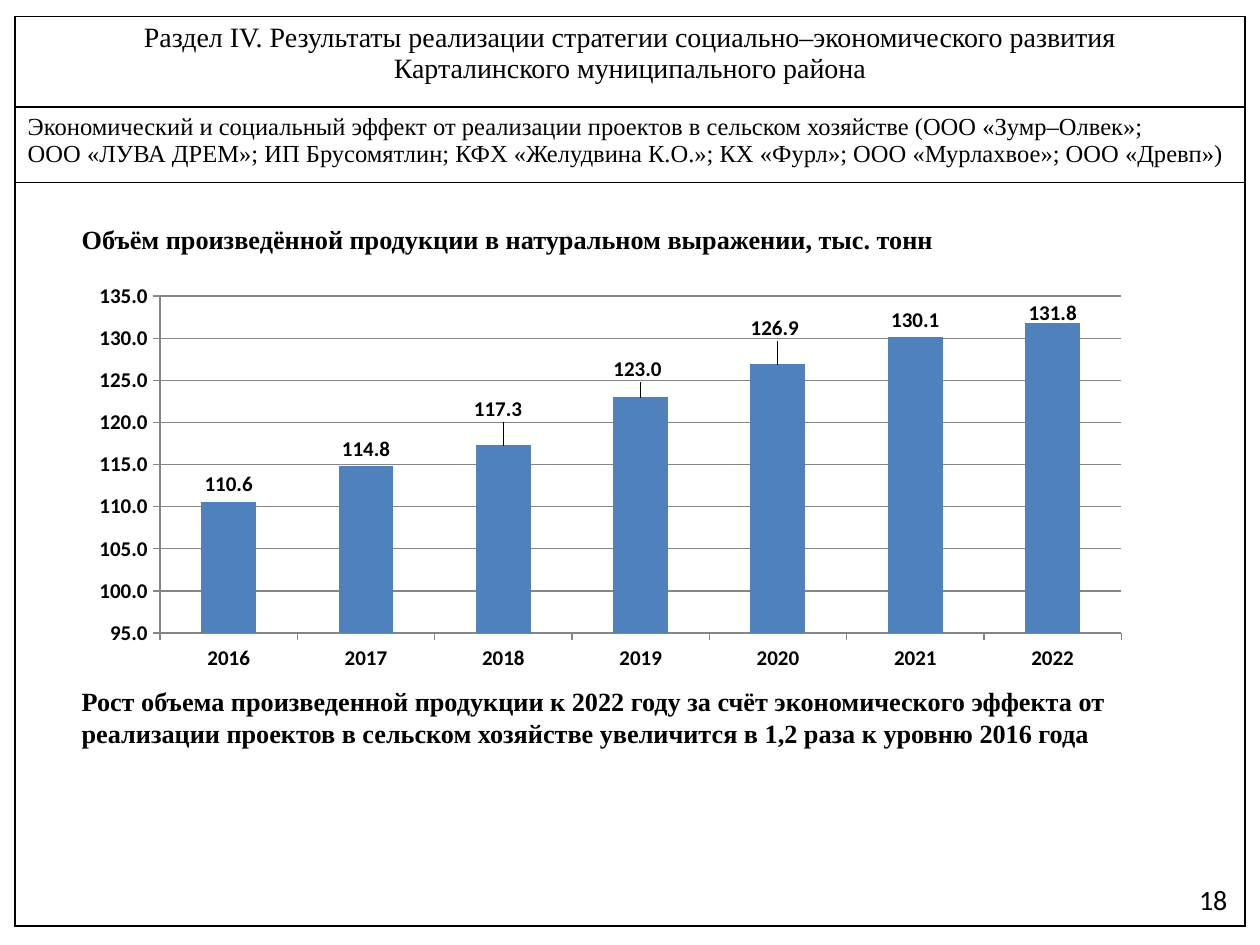
from lxml import etree
from pptx import Presentation
from pptx.chart.data import CategoryChartData
from pptx.dml.color import RGBColor
from pptx.enum.chart import XL_CHART_TYPE, XL_LABEL_POSITION as LABEL_POS, XL_TICK_MARK as TICK
from pptx.enum.text import MSO_ANCHOR as ANCHOR, PP_ALIGN as ALIGN
from pptx.oxml import parse_xml
from pptx.oxml.ns import nsdecls, qn
from pptx.util import Inches, Pt

COLORS = {"text": "000000", "border": "000000", "bar": "4F81BD", "axis": "868686"}
SERIF, SANS = "Times New Roman", "Calibri"

TITLE = ["Раздел IV. Результаты реализации стратегии социально–экономического развития",
         "Карталинского муниципального района"]
SUBTITLE = ["Экономический и социальный эффект от реализации проектов в сельском хозяйстве (ООО «Зумр–Олвек»;",
            "ООО «ЛУВА ДРЕМ»; ИП Брусомятлин; КФХ «Желудвина К.О.»; КХ «Фурл»; ООО «Мурлахвое»; ООО «Древп»)"]
CHART_TITLE = "Объём произведённой продукции в натуральном выражении, тыс. тонн"
CONCLUSION = ("Рост объема произведенной продукции к 2022 году за счёт экономического эффекта от "
              "реализации проектов в сельском хозяйстве увеличится в 1,2 раза к уровню 2016 года")
OUTPUT = {"2016": 110.6, "2017": 114.8, "2018": 117.3, "2019": 123.0,
          "2020": 126.9, "2021": 130.1, "2022": 131.8}
# Label shifts as fractions of the chart size, by point index
LABEL_SHIFTS = {2: (-0.005, -0.045), 3: (-0.003, -0.025), 4: (-0.003, -0.045), 6: (0, 0.02)}


def rgb(name):
    return RGBColor.from_string(COLORS[name])


def style_font(font, size, name, bold=False):
    font.size, font.name, font.bold = Pt(size), name, bold
    font.color.rgb = rgb("text")


def write(tf, lines, size, name=SERIF, bold=False, align=ALIGN.LEFT):
    tf.text = "\n".join(lines)
    for p in tf.paragraphs:
        p.alignment = align
        for r in p.runs:
            style_font(r.font, size, name, bold)


def add_text(slide, box, text, size, anchor=ANCHOR.TOP, **style):
    tf = slide.shapes.add_textbox(*map(Inches, box)).text_frame
    tf.word_wrap = True
    tf.vertical_anchor = anchor
    write(tf, [text], size, **style)


def set_borders(cell):
    tc_pr = cell._tc.get_or_add_tcPr()
    for i, side in enumerate(("lnL", "lnR", "lnT", "lnB")):
        tc_pr.insert(i, parse_xml(
            f'<a:{side} {nsdecls("a")} w="{Pt(1)}"><a:solidFill>'
            f'<a:srgbClr val="{COLORS["border"]}"/></a:solidFill></a:{side}>'))


def add_frame_table(slide, box, heights):
    """Bordered page frame: title row, subtitle row and an empty body row."""
    table = slide.shapes.add_table(len(heights), 1, *map(Inches, box)).table
    table.first_row = table.horz_banding = False
    for row, height in zip(table.rows, heights):
        row.height = Inches(height)
        cell = row.cells[0]
        cell.fill.background()
        set_borders(cell)
    write(table.cell(0, 0).text_frame, TITLE, 16, align=ALIGN.CENTER)
    write(table.cell(1, 0).text_frame, SUBTITLE, 14, align=ALIGN.JUSTIFY)


def manual_layout(**values):
    layout = etree.Element(qn("c:layout"))
    manual = etree.SubElement(layout, qn("c:manualLayout"))
    for tag, value in values.items():
        etree.SubElement(manual, qn(f"c:{tag}")).set("val", str(value))
    return layout


def style_axis(axis):
    style_font(axis.tick_labels.font, 12, SANS, bold=True)
    axis.major_tick_mark, axis.minor_tick_mark = TICK.OUTSIDE, TICK.NONE
    axis.format.line.color.rgb = rgb("axis")
    axis.format.line.width = Pt(0.75)


def style_labels(series):
    labels = series.data_labels
    labels.show_value = True
    labels.number_format, labels.number_format_is_linked = "0.0", False
    labels.position = LABEL_POS.OUTSIDE_END
    style_font(labels.font, 12, SANS, bold=True)
    for i, (dx, dy) in LABEL_SHIFTS.items():
        label = series.points[i].data_label
        style_font(label.font, 12, SANS, bold=True)
        label.position = LABEL_POS.OUTSIDE_END
        idx = labels._element.xpath(f"c:dLbl/c:idx[@val='{i}']")[0]
        idx.addnext(manual_layout(x=dx, y=dy))


def add_output_chart(slide, box):
    data = CategoryChartData(number_format="0.0")
    data.categories = list(OUTPUT)
    data.add_series("Series 1", list(OUTPUT.values()))
    chart = slide.shapes.add_chart(
        XL_CHART_TYPE.COLUMN_CLUSTERED, *map(Inches, box), data).chart
    chart.has_legend = chart.has_title = False
    style_font(chart.font, 10, SANS)

    plot = chart.plots[0]
    plot.gap_width, plot.vary_by_categories = 150, False
    series = plot.series[0]
    series.format.fill.solid()
    series.format.fill.fore_color.rgb = rgb("bar")
    style_labels(series)

    style_axis(chart.category_axis)
    axis = chart.value_axis
    style_axis(axis)
    axis.minimum_scale, axis.maximum_scale, axis.major_unit = 95, 135, 5
    axis.tick_labels.number_format = "0.0"
    axis.tick_labels.number_format_is_linked = False
    axis.has_major_gridlines = True
    axis.major_gridlines.format.line.color.rgb = rgb("axis")
    axis.major_gridlines.format.line.width = Pt(0.75)

    area = chart._chartSpace.chart.plotArea
    for old in area.findall(qn("c:layout")):
        area.remove(old)
    area.insert(0, manual_layout(layoutTarget="inner", xMode="edge", yMode="edge",
                                 x=0.077, y=0.05, w=0.904, h=0.836))


def main():
    prs = Presentation()
    prs.slide_width, prs.slide_height = Inches(10), Inches(7.5)
    slide = prs.slides.add_slide(prs.slide_layouts[6])
    add_frame_table(slide, (0.12, 0.13, 9.76, 7.22), (0.72, 0.6, 5.9))
    add_text(slide, (0.55, 1.72, 7.27, 0.35), CHART_TITLE, 15, bold=True)
    add_output_chart(slide, (0.62, 2.19, 8.44, 3.2))
    add_text(slide, (0.55, 5.39, 8.36, 0.61), CONCLUSION, 15, bold=True)
    add_text(slide, (7.51, 6.94, 2.33, 0.4), "18", 16, ANCHOR.MIDDLE,
             name=SANS, align=ALIGN.RIGHT)
    prs.save("out.pptx")


if __name__ == "__main__":
    main()
